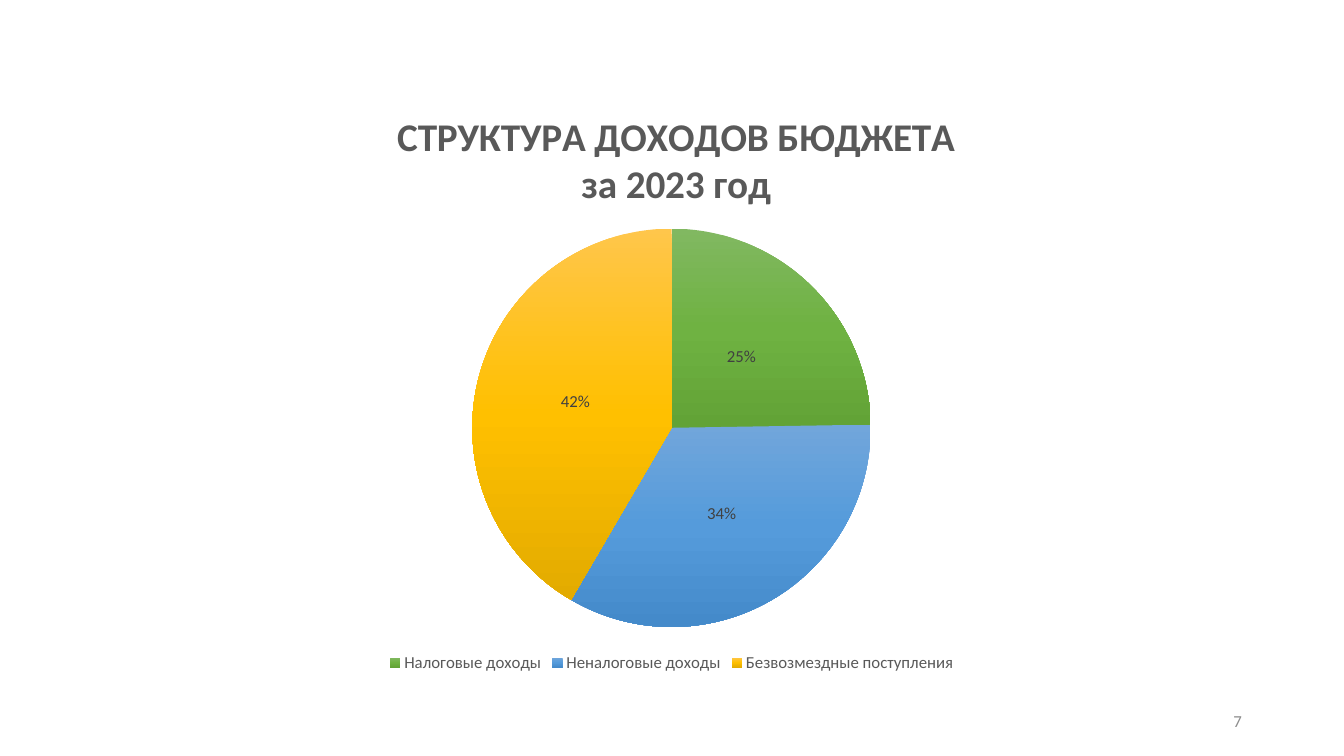
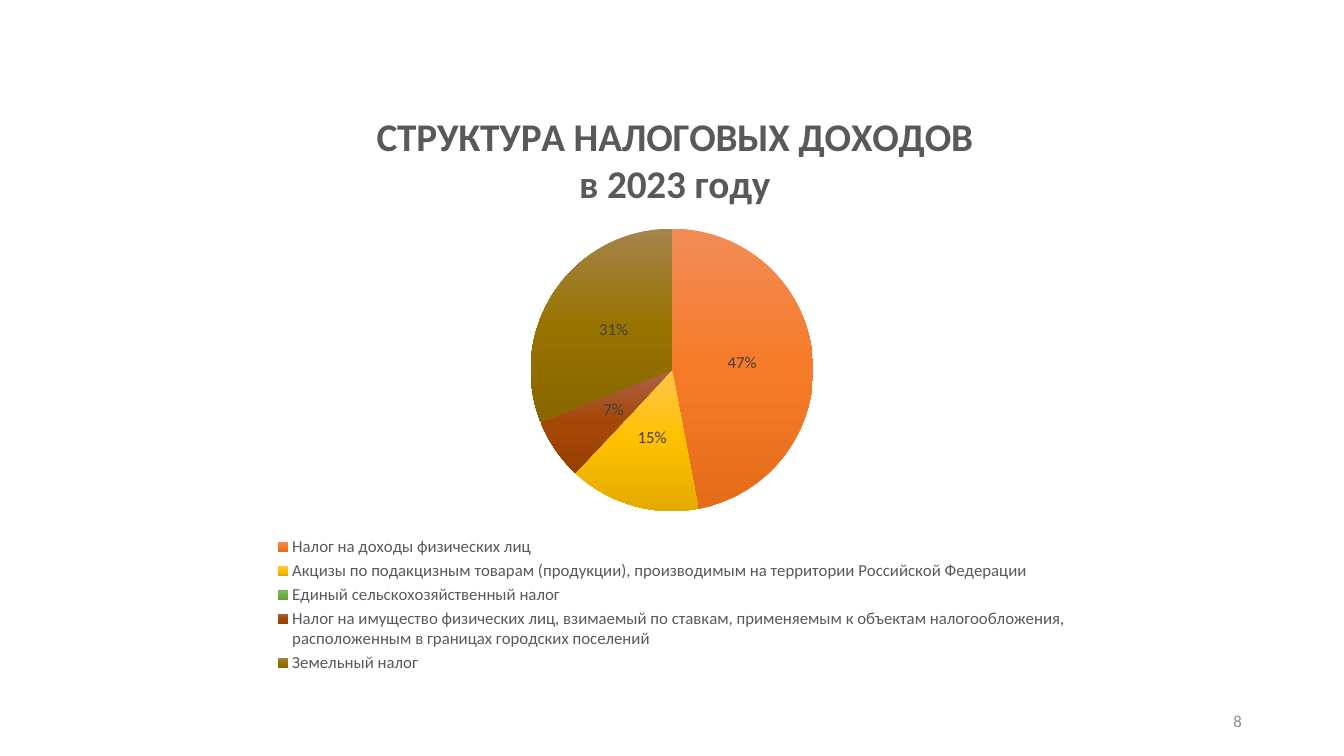
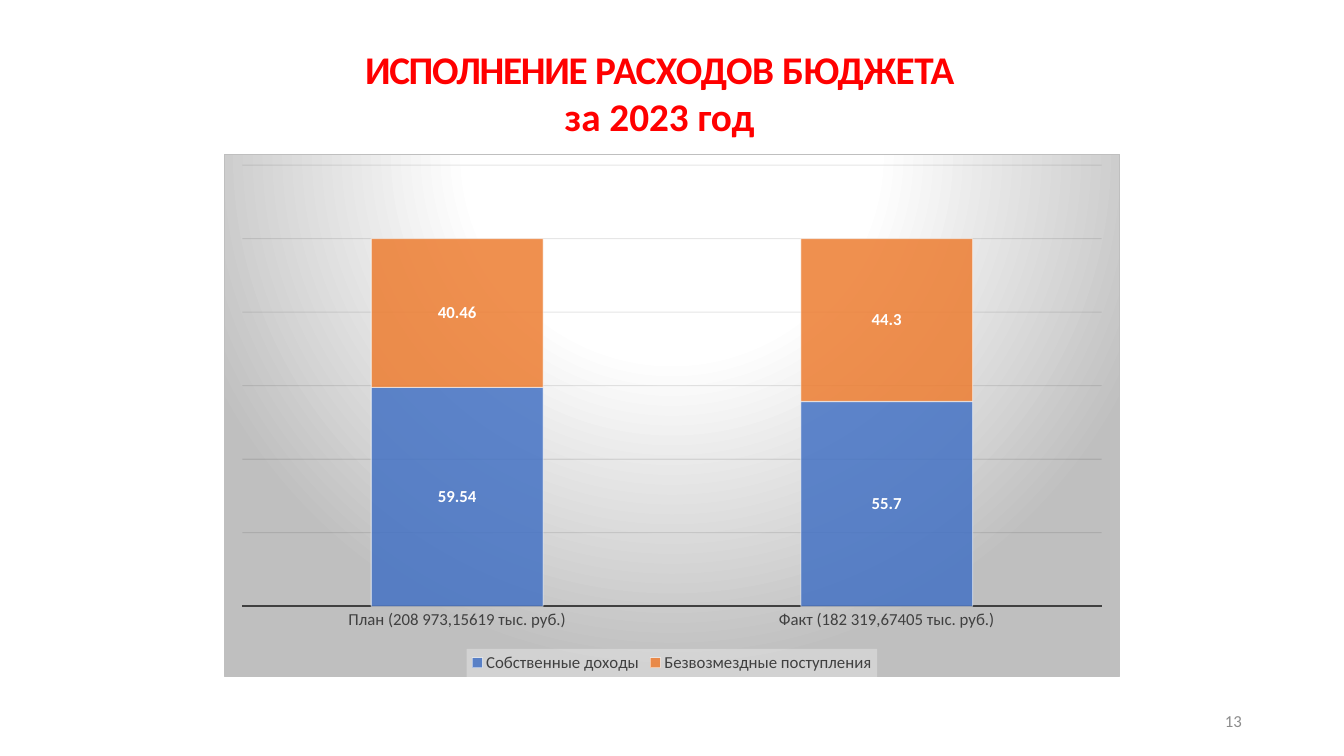
from dataclasses import dataclass

from lxml.etree import SubElement
from pptx import Presentation
from pptx.chart.chart import Chart
from pptx.chart.data import CategoryChartData
from pptx.chart.series import _BaseCategorySeries
from pptx.dml.chtfmt import ChartFormat
from pptx.dml.color import RGBColor
from pptx.enum.chart import XL_CHART_TYPE, XL_LABEL_POSITION, XL_LEGEND_POSITION, XL_TICK_MARK
from pptx.enum.text import MSO_ANCHOR, MSO_AUTO_SIZE, PP_ALIGN
from pptx.oxml import parse_xml
from pptx.oxml.ns import nsdecls, qn
from pptx.slide import Slide
from pptx.text.text import Font, TextFrame
from pptx.util import Inches, Pt

SLIDE_W, SLIDE_H = 13.333, 7.5
FONT = "Calibri"
BODY_SIZE, TITLE_SIZE = 12, 28
GREY, DARK, PALE, WHITE = "595959", "404040", "8C8C8C", "FFFFFF"
RED, SILVER = "FF0000", "BFBFBF"
ORANGE = ("F18C57", "F67B28", "E56C19")
GOLD = ("FFC64B", "FFC000", "E3AB00")
GREEN = ("81B861", "6FB242", "62A336")
BLUE = ("71A6DB", "559BDB", "448ACA")
RUST = ("AB634B", "A54707", "983E00")
OLIVE = ("A4844B", "997300", "886600")
DOWNWARD = '<a:lin ang="5400000" scaled="0"/>'
FROM_ABOVE = ('<a:path path="circle"><a:fillToRect l="50000" t="-80000" '
              'r="50000" b="180000"/></a:path>')


@dataclass(frozen=True)
class Area:
    """A rectangle in shares of its parent's width and height."""
    left: float
    top: float
    width: float
    height: float

    def on_slide(self) -> tuple[int, int, int, int]:
        return (Inches(self.left * SLIDE_W), Inches(self.top * SLIDE_H),
                Inches(self.width * SLIDE_W), Inches(self.height * SLIDE_H))


@dataclass(frozen=True)
class Slice:
    label: str
    value: float
    shades: tuple[str, str, str]


@dataclass(frozen=True)
class PieSlide:
    number: int
    heading: tuple[str, str]
    heading_left: float
    pie: Area
    slices: tuple[Slice, ...]


@dataclass(frozen=True)
class Source:
    name: str
    shares: tuple[float, float]
    color: str


@dataclass(frozen=True)
class SpacedRun:
    text: str
    spacing: float


PIE_CHART = Area(1 / 6, 0.105, 2 / 3, 0.79)
COLUMN_CHART = Area(1 / 6, 0.204, 2 / 3, 0.692)
COLUMN_PLOT = Area(0.02, 0.02, 0.96, 0.845)
EXPENSE_HEADING = Area(0.243, 0.049, 0.5, 0.139)
PAGE_NUMBER = Area(0.7065, 0.927, 0.225, 0.053)
PIE_HEADING_TOP = 0.05

PIE_SLIDES = (
    PieSlide(7, ("СТРУКТУРА ДОХОДОВ БЮДЖЕТА", "за 2023 год"), 0.19,
             Area(0.277, 0.25, 0.445, 0.667), (
        Slice("Налоговые доходы", 25, GREEN),
        Slice("Неналоговые доходы", 34, BLUE),
        Slice("Безвозмездные поступления", 42, GOLD))),
    PieSlide(8, ("СТРУКТУРА НАЛОГОВЫХ ДОХОДОВ", "в 2023 году"), 0.167,
             Area(0.342, 0.25, 0.316, 0.473), (
        Slice("Налог на доходы физических лиц", 47, ORANGE),
        Slice("Акцизы по подакцизным товарам (продукции), производимым "
              "на территории Российской Федерации", 15, GOLD),
        Slice("Единый сельскохозяйственный налог", 0, GREEN),
        Slice("Налог на имущество физических лиц, взимаемый по ставкам, применяемым "
              "к объектам налогообложения, расположенным в границах городских поселений",
              7, RUST),
        Slice("Земельный налог", 31, OLIVE))),
)
EXPENSE_TITLE = (
    (SpacedRun("ИСПОЛНЕНИЕ ", -0.9), SpacedRun("РАСХОДОВ БЮДЖЕТА", -0.3)),
    (SpacedRun("за 2023 ", 0), SpacedRun("год", -0.2)),
)
EXPENSE_STAGES = ("План (208 973,15619 тыс. руб.)", "Факт (182 319,67405 тыс. руб.)")
EXPENSE_SOURCES = (
    Source("Собственные доходы", (59.54, 55.7), "4472C4"),
    Source("Безвозмездные поступления", (40.46, 44.3), "ED7D31"),
)


def rgb(color: str) -> RGBColor:
    return RGBColor.from_string(color)


def style(font: Font, color: str, size: float = BODY_SIZE, bold: bool = False) -> None:
    font.name, font.size, font.bold = FONT, Pt(size), bold
    font.color.rgb = rgb(color)


def gradient(stops: list[tuple[int, str]], direction: str) -> str:
    marks = "".join(f'<a:gs pos="{place * 1000}"><a:srgbClr val="{color}"/></a:gs>'
                    for place, color in stops)
    return f'<a:gradFill rotWithShape="1"><a:gsLst>{marks}</a:gsLst>{direction}</a:gradFill>'


def shape_properties(content: str):
    return parse_xml(f'<c:spPr {nsdecls("c", "a")}>{content}</c:spPr>')


def fade(target: ChartFormat, part: str, opacity: int) -> None:
    """Make the solid colour of a chart part ("" for fill, "a:ln/" for line) translucent."""
    for color in target._element.xpath(f"./c:spPr/{part}a:solidFill/a:srgbClr"):
        SubElement(color, qn("a:alpha")).set("val", str(opacity * 1000))


def place(parent, index: int, values: dict[str, float], inner: bool = False) -> None:
    """Give a chart part a fixed place, in shares of the chart."""
    for old in parent.findall(qn("c:layout")):
        parent.remove(old)
    target = '<c:layoutTarget val="inner"/>' if inner else ""
    modes = "".join(f'<c:{key}Mode val="edge"/>' for key in "xy")
    sizes = "".join(f'<c:{key} val="{value}"/>' for key, value in values.items())
    parent.insert(index, parse_xml(
        f'<c:layout {nsdecls("c")}><c:manualLayout>{target}{modes}{sizes}'
        '</c:manualLayout></c:layout>'))


def place_plot(chart: Chart, area: Area) -> None:
    place(chart._chartSpace.chart.plotArea, 0,
          {"x": area.left, "y": area.top, "w": area.width, "h": area.height}, inner=True)


def add_text_frame(slide: Slide, area: Area) -> TextFrame:
    frame = slide.shapes.add_textbox(*area.on_slide()).text_frame
    frame.word_wrap = True
    return frame


def add_page_number(slide: Slide, number: int) -> None:
    frame = add_text_frame(slide, PAGE_NUMBER)
    frame.vertical_anchor = MSO_ANCHOR.MIDDLE
    frame.paragraphs[0].alignment = PP_ALIGN.RIGHT
    run = frame.paragraphs[0].add_run()
    run.text = str(number)
    style(run.font, PALE)


def add_styled_chart(slide: Slide, kind: XL_CHART_TYPE, area: Area,
                     figures: CategoryChartData, legend_color: str) -> Chart:
    chart = slide.shapes.add_chart(kind, *area.on_slide(), figures).chart
    style(chart.font, "000000", 10)
    chart.has_title = False
    chart.has_legend = True
    chart.legend.position = XL_LEGEND_POSITION.BOTTOM
    chart.legend.include_in_layout = False
    style(chart.legend.font, legend_color)
    return chart


def label_series(series: _BaseCategorySeries, color: str, bold: bool, percent: bool) -> None:
    labels = series.data_labels
    style(labels.font, color, bold=bold)
    labels.number_format = "0%" if percent else "General"
    labels.number_format_is_linked = False
    labels.position = XL_LABEL_POSITION.CENTER
    labels.show_percentage, labels.show_value = percent, not percent


def add_pie_heading(chart: Chart, content: PieSlide) -> None:
    chart.has_title = True
    title = chart.chart_title
    title.include_in_layout = False
    frame = title.text_frame
    for index, line in enumerate(content.heading):
        paragraph = frame.add_paragraph() if index else frame.paragraphs[0]
        paragraph.alignment = PP_ALIGN.CENTER
        run = paragraph.add_run()
        run.text = line
        style(run.font, GREY, TITLE_SIZE, bold=True)
    place(title._element, 1, {"x": content.heading_left, "y": PIE_HEADING_TOP})


def build_pie_slide(slide: Slide, content: PieSlide) -> None:
    figures = CategoryChartData()
    figures.categories = [part.label for part in content.slices]
    figures.add_series("Series 1", [part.value for part in content.slices])
    chart = add_styled_chart(slide, XL_CHART_TYPE.PIE, PIE_CHART, figures, GREY)
    add_pie_heading(chart, content)
    place_plot(chart, content.pie)
    chart.plots[0].vary_by_categories = True
    series = chart.plots[0].series[0]
    label_series(series, DARK, bold=False, percent=True)
    hidden_labels = 0
    for index, part in enumerate(content.slices):
        point = series.points[index].format._element
        point.append(shape_properties(
            gradient(list(zip((0, 50, 100), part.shades)), DOWNWARD) + '<a:ln><a:noFill/></a:ln>'))
        for extra in point.findall(qn("c:spPr"))[:-1]:
            point.remove(extra)
        if not part.value:
            series.data_labels._element.insert(hidden_labels, parse_xml(
                f'<c:dLbl {nsdecls("c")}><c:idx val="{index}"/><c:delete val="1"/></c:dLbl>'))
            hidden_labels += 1
    add_page_number(slide, content.number)


def add_expense_heading(slide: Slide) -> None:
    frame = add_text_frame(slide, EXPENSE_HEADING)
    frame.auto_size = MSO_AUTO_SIZE.SHAPE_TO_FIT_TEXT
    frame.margin_left, frame.margin_right = 0, Inches(0.06)
    frame.margin_top, frame.margin_bottom = Inches(0.1), 0
    for index, line in enumerate(EXPENSE_TITLE):
        paragraph = frame.add_paragraph() if index else frame.paragraphs[0]
        paragraph.alignment = PP_ALIGN.CENTER
        for piece in line:
            run = paragraph.add_run()
            run.text = piece.text
            style(run.font, RED, TITLE_SIZE, bold=True)
            run.font._element.set("spc", str(round(piece.spacing * 100)))
    frame.paragraphs[0].line_spacing = Pt(32.6)


def style_axes(chart: Chart) -> None:
    stages, scale = chart.category_axis, chart.value_axis
    stages.major_tick_mark = XL_TICK_MARK.NONE
    style(stages.tick_labels.font, DARK)
    stages.format.line.color.rgb = rgb(DARK)
    stages.format.line.width = Pt(1.5)
    scale.minimum_scale, scale.maximum_scale, scale.major_unit = 0, 120, 20
    scale.visible = False
    grid = scale.major_gridlines.format
    grid.line.color.rgb = rgb("0D0D0D")
    grid.line.width = Pt(0.75)
    fade(grid, "a:ln/", 10)


def style_backdrops(chart: Chart) -> None:
    """Shade the chart area and put a translucent panel behind the legend."""
    shade = gradient([(0, WHITE), (39, WHITE), (100, SILVER)], FROM_ABOVE)
    border = (f'<a:ln w="{Pt(0.75)}"><a:solidFill><a:srgbClr val="{SILVER}"/>'
              '</a:solidFill></a:ln>')
    chart._chartSpace.chart.addnext(shape_properties(shade + border))
    panel = ('<a:solidFill><a:srgbClr val="F2F2F2"><a:alpha val="39000"/>'
             '</a:srgbClr></a:solidFill>')
    chart.legend._element.find(qn("c:overlay")).addnext(shape_properties(panel))


def build_expense_slide(slide: Slide) -> None:
    figures = CategoryChartData()
    figures.categories = EXPENSE_STAGES
    for source in EXPENSE_SOURCES:
        figures.add_series(source.name, source.shares)
    chart = add_styled_chart(slide, XL_CHART_TYPE.COLUMN_STACKED, COLUMN_CHART, figures, DARK)
    place_plot(chart, COLUMN_PLOT)
    style_axes(chart)
    style_backdrops(chart)
    plot = chart.plots[0]
    plot.gap_width, plot.overlap, plot.vary_by_categories = 150, 100, False
    for series, source in zip(plot.series, EXPENSE_SOURCES):
        look = series.format
        look.fill.solid()
        look.fill.fore_color.rgb = rgb(source.color)
        look.line.color.rgb = rgb(WHITE)
        look.line.width = Pt(0.75)
        fade(look, "", 85)
        fade(look, "a:ln/", 50)
        label_series(series, WHITE, bold=True, percent=False)
    add_expense_heading(slide)
    add_page_number(slide, 13)


def main() -> None:
    deck = Presentation()
    deck.slide_width, deck.slide_height = Inches(SLIDE_W), Inches(SLIDE_H)
    blank = deck.slide_layouts[6]
    for content in PIE_SLIDES:
        build_pie_slide(deck.slides.add_slide(blank), content)
    build_expense_slide(deck.slides.add_slide(blank))
    deck.save("out.pptx")


if __name__ == "__main__":
    main()
